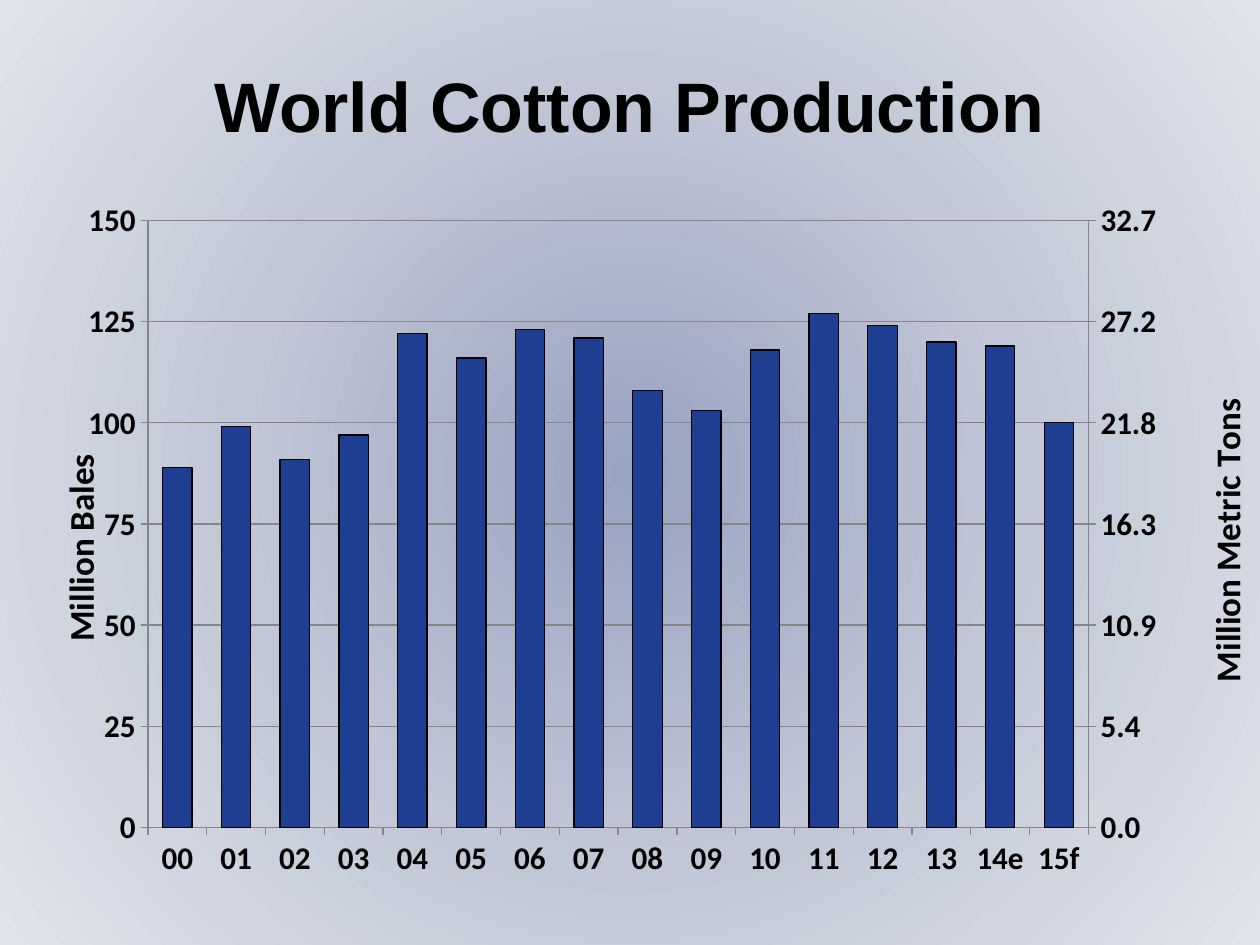
import copy
from dataclasses import dataclass

import lxml.etree
import pptx
import pptx.chart.axis
import pptx.chart.data
import pptx.dml.color
import pptx.enum.chart
import pptx.enum.text
import pptx.oxml
import pptx.oxml.ns
import pptx.util

Inches, Pt, qn = pptx.util.Inches, pptx.util.Pt, pptx.oxml.ns.qn


@dataclass(frozen=True)
class Theme:
    text: str = "000000"
    bar: str = "1E3E92"
    grid: str = "868686"
    background: tuple = ((0, "98A3C1"), (50, "C2C7D7"), (100, "E1E4EB"))
    title_font: str = "Arial"
    chart_font: str = "Calibri"
    title_size: int = 40
    axis_title_size: int = 20
    label_size: int = 18


YEARS = ["00", "01", "02", "03", "04", "05", "06", "07",
         "08", "09", "10", "11", "12", "13", "14e", "15f"]
BALES = [89, 99, 91, 97, 122, 116, 123, 121, 108, 103, 118, 127, 124, 120, 119, 100]
TONS = [19.4, 21.5, 19.8, 21.1, 26.5, 25.3, 26.8, 26.3,
        23.6, 22.5, 25.6, 27.8, 27, 26.2, 26, 21.8]
MAX_BALES, BALES_STEP = 150, 25
BALES_PER_TON = 4.59


def rgb(value):
    return pptx.dml.color.RGBColor.from_string(value)


def set_layout(parent, index, **places):
    """Give a chart part a manual layout, in fractions of the chart."""
    for old in parent.findall(qn("c:layout")):
        parent.remove(old)
    layout = lxml.etree.Element(qn("c:layout"))
    manual = lxml.etree.SubElement(layout, qn("c:manualLayout"))
    if "w" in places:
        lxml.etree.SubElement(manual, qn("c:layoutTarget"), val="inner")
    for side in ("xMode", "yMode"):
        lxml.etree.SubElement(manual, qn("c:" + side), val="edge")
    for key, value in places.items():
        lxml.etree.SubElement(manual, qn("c:" + key), val=str(value))
    parent.insert(index, layout)


class SlideBuilder:
    def __init__(self, s, theme):
        self.s, self.theme = s, theme

    def background(self):
        fill = self.s.background.fill
        fill.solid()
        solid = self.s._element.find(".//" + qn("p:bgPr")).find(qn("a:solidFill"))
        stops = "".join(f'<a:gs pos="{pos * 1000}"><a:srgbClr val="{color}"/></a:gs>'
                        for pos, color in self.theme.background)
        gradient = pptx.oxml.parse_xml(
            f'<a:gradFill {pptx.oxml.ns.nsdecls("a")} rotWithShape="1">'
            f'<a:gsLst>{stops}</a:gsLst><a:path path="circle">'
            '<a:fillToRect l="50000" t="50000" r="50000" b="50000"/>'
            '</a:path></a:gradFill>')
        solid.getparent().replace(solid, gradient)

    def style_run(self, r, size, font):
        r.font.size, r.font.name, r.font.bold = Pt(size), font, True
        r.font.color.rgb = rgb(self.theme.text)

    def title(self, text, left, top, width, height):
        sp = self.s.shapes.add_textbox(
            Inches(left), Inches(top), Inches(width), Inches(height))
        tf = sp.text_frame
        tf.word_wrap = True
        tf.vertical_anchor = pptx.enum.text.MSO_ANCHOR.MIDDLE
        p = tf.paragraphs[0]
        p.alignment = pptx.enum.text.PP_ALIGN.CENTER
        r = p.add_run()
        r.text = text
        self.style_run(r, self.theme.title_size, self.theme.title_font)

    def value_axis(self, axis, text, top_value, step, number_format, x, y):
        axis.minimum_scale, axis.maximum_scale = 0, top_value
        axis.major_unit = step
        axis.tick_labels.number_format = number_format
        axis.tick_labels.number_format_is_linked = False
        r = axis.axis_title.text_frame.paragraphs[0].add_run()
        r.text = text
        self.style_run(r, self.theme.axis_title_size, self.theme.chart_font)
        title = axis.axis_title._element
        body = title.find(".//" + qn("a:bodyPr"))
        body.set("rot", "-5400000")
        body.set("vert", "horz")
        set_layout(title, 1, x=x, y=y)

    def second_axis(self, chart):
        """Move the last series to its own bars, read on a right-hand axis."""
        plot = chart._chartSpace.find(".//" + qn("c:plotArea"))
        bars = plot.find(qn("c:barChart"))
        right_bars = copy.deepcopy(bars)
        bars.remove(bars.findall(qn("c:ser"))[1])
        right_bars.remove(right_bars.findall(qn("c:ser"))[0])
        bars.addnext(right_bars)

        cat, val = plot.find(qn("c:catAx")), plot.find(qn("c:valAx"))
        right_cat, right_val = copy.deepcopy(cat), copy.deepcopy(val)
        val.addnext(right_cat)
        right_cat.addnext(right_val)
        for ref, new_id in zip(right_bars.findall(qn("c:axId")), ("501", "502")):
            ref.set("val", new_id)
        for ax, own, other in ((right_cat, "501", "502"), (right_val, "502", "501")):
            ax.find(qn("c:axId")).set("val", own)
            ax.find(qn("c:crossAx")).set("val", other)
        right_cat.find(qn("c:delete")).set("val", "1")
        right_val.find(qn("c:axPos")).set("val", "r")
        right_val.find(qn("c:crosses")).set("val", "max")
        axis = pptx.chart.axis.ValueAxis(right_val)
        axis.has_major_gridlines = False
        return axis

    def chart(self, left, top, width, height):
        t, enum = self.theme, pptx.enum.chart
        data = pptx.chart.data.CategoryChartData()
        data.categories = YEARS
        data.add_series("Series 1", BALES)
        data.add_series("Series 2", TONS)
        chart = self.s.shapes.add_chart(
            enum.XL_CHART_TYPE.COLUMN_CLUSTERED, Inches(left), Inches(top),
            Inches(width), Inches(height), data).chart
        chart.has_title = chart.has_legend = False
        font = chart.font
        font.size, font.name, font.bold = Pt(t.label_size), t.chart_font, True
        font.color.rgb = rgb(t.text)

        # Bars: blue for bales, clear for tons
        plot = chart.plots[0]
        plot.gap_width, plot.vary_by_categories = 100, False
        bales, tons = plot.series
        bales.format.fill.solid()
        bales.format.fill.fore_color.rgb = rgb(t.bar)
        bales.format.line.color.rgb = rgb(t.text)
        bales.format.line.width = Pt(0.75)
        tons.format.fill.background()
        tons.format.line.fill.background()

        # Lines and ticks shared by the axes
        cat, val = chart.category_axis, chart.value_axis
        val.has_major_gridlines = True
        for part in (cat, val, val.major_gridlines):
            part.format.line.color.rgb = rgb(t.grid)
            part.format.line.width = Pt(0.75)
        for axis in (cat, val):
            axis.major_tick_mark = enum.XL_TICK_MARK.OUTSIDE
            axis.minor_tick_mark = enum.XL_TICK_MARK.NONE
        cat.tick_label_position = enum.XL_TICK_LABEL_POSITION.LOW

        # Left and right scales
        right = self.second_axis(chart)
        self.value_axis(val, "Million Bales", MAX_BALES, BALES_STEP,
                        "General", 0.015, 0.395)
        self.value_axis(right, "Million Metric Tons", MAX_BALES / BALES_PER_TON,
                        BALES_STEP / BALES_PER_TON, "#,##0.0", 0.96, 0.32)
        set_layout(chart._chartSpace.find(".//" + qn("c:plotArea")), 0,
                   x=0.096, y=0.097, w=0.775, h=0.804)


def main():
    prs = pptx.Presentation()
    prs.slide_width, prs.slide_height = Inches(10), Inches(7.5)
    slide = SlideBuilder(prs.slides.add_slide(prs.slide_layouts[6]), Theme())
    slide.background()
    slide.title("World Cotton Production", 0.25, 0.33, 9.49, 1)
    slide.chart(0.25, 1.17, 9.75, 5.99)
    prs.save("out.pptx")


if __name__ == "__main__":
    main()
